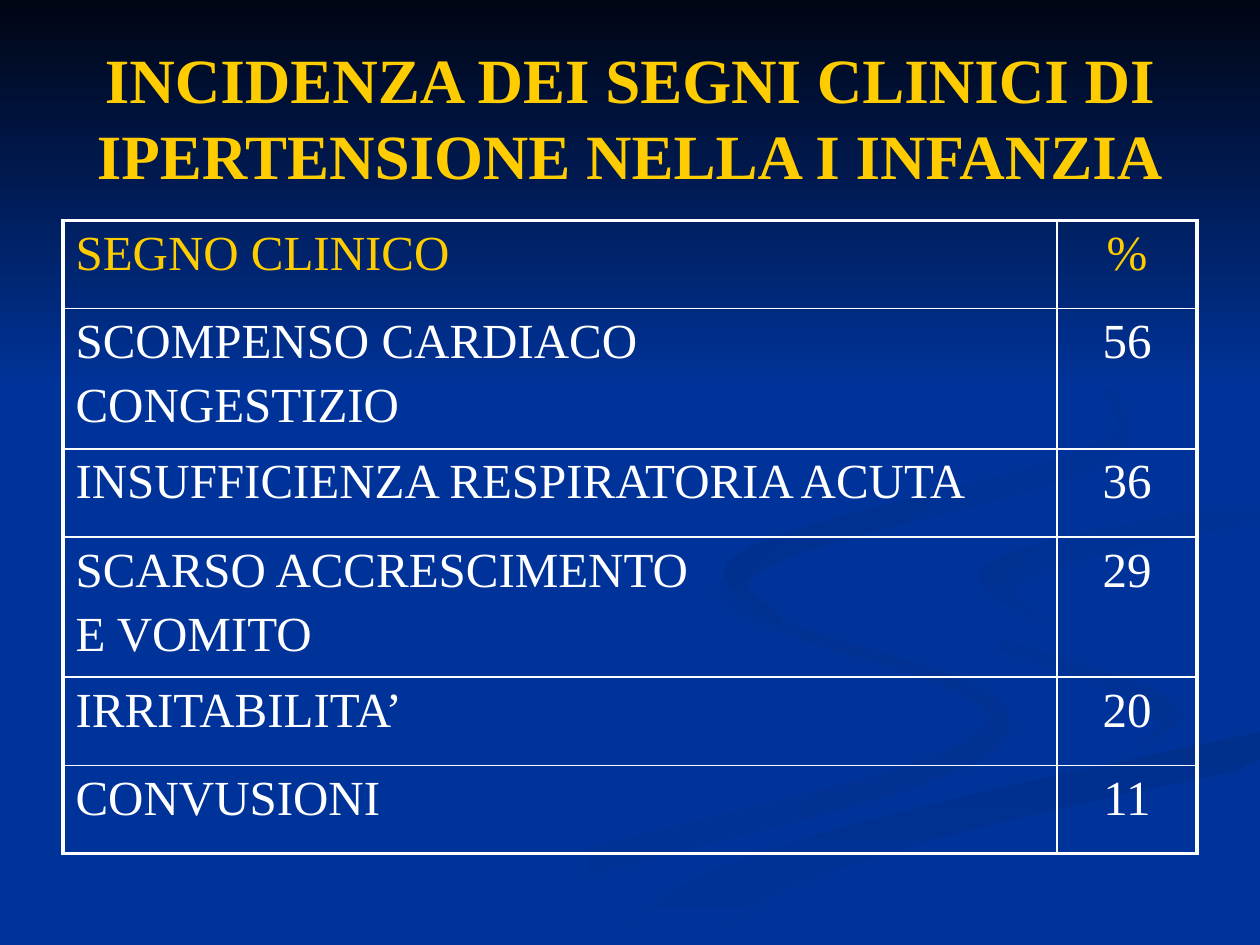
"""Build the slide on how often clinical signs of hypertension occur in infancy."""
import itertools
import math
import typing

import pptx
import pptx.dml.color
import pptx.enum.text
import pptx.oxml
import pptx.oxml.ns
import pptx.util

RGB = pptx.dml.color.RGBColor
ALIGN = pptx.enum.text.PP_ALIGN
ANCHOR = pptx.enum.text.MSO_ANCHOR
BLUE = RGB(0x00, 0x33, 0x99)
NIGHT = RGB(0x00, 0x05, 0x14)
DUSK = RGB(0x00, 0x31, 0x93)
DEEP = RGB(0x00, 0x2F, 0x8C)
SHADE = RGB(0x00, 0x30, 0x91)
GOLD = RGB(0xFF, 0xCC, 0x00)
WHITE = RGB(0xFF, 0xFF, 0xFF)

WIDTH = pptx.util.Inches(10)
HEIGHT = pptx.util.Inches(7.5)
MARGIN = 0.05
CONTENT_WIDTH = int(WIDTH * (1 - 2 * MARGIN))
SINGLE_ROW, DOUBLE_ROW = 0.7, 1.07
THIN, THICK = 1, 2.25
STEPS_PER_LEG = 16

TITLE = "INCIDENZA DEI SEGNI CLINICI DI IPERTENSIONE NELLA I INFANZIA"
SIGNS = [
    (["SEGNO CLINICO"], "%"),
    (["SCOMPENSO CARDIACO", "CONGESTIZIO"], "56"),
    (["INSUFFICIENZA RESPIRATORIA ACUTA"], "36"),
    (["SCARSO ACCRESCIMENTO", "E VOMITO"], "29"),
    (["IRRITABILITA’"], "20"),
    (["CONVUSIONI"], "11"),
]


class Turn(typing.NamedTuple):
    """A bend of a ribbon: its centre and its breadth, in inches."""
    x: float
    y: float
    breadth: float


class Ribbon(typing.NamedTuple):
    """A ribbon: its turns, its swell between them and its shading."""
    turns: list
    swell: float
    start: RGB
    end: RGB
    clockwise: int


RIBBONS = [
    Ribbon([Turn(5.76, 4.55, 0), Turn(5.73, 4.65, 0.06), Turn(7.93, 5.7, 0.14),
            Turn(3.3, 7.49, 0.61)], 0.1, BLUE, DUSK, 0),
    Ribbon([Turn(7.25, 4.6, 0), Turn(7.26, 4.7, 0.02), Turn(9.3, 5.75, 0.25),
            Turn(8.94, 6.05, 0)], 0.1, BLUE, DUSK, 45),
    Ribbon([Turn(10, 3.95, 1), Turn(7.53, 4.6, 0.56), Turn(9.71, 5.65, 0.56),
            Turn(4.9, 7.49, 0.26)], 0.15, BLUE, BLUE, 0),
    Ribbon([Turn(10.7, 5.81, 1.4), Turn(5.37, 7.49, 0.68)], 0, DEEP, BLUE, 90),
    Ribbon([Turn(10, 4.05, 1), Turn(7.93, 4.66, 0.24), Turn(8.26, 4.96, 0)],
           0.1, SHADE, BLUE, 45),
    Ribbon([Turn(8.73, 3, 0.05), Turn(8.91, 3.4, 0.05), Turn(5.85, 4.62, 0.16),
            Turn(6.2, 5, 0)], 0.2, DEEP, BLUE, 45),
]


def ribbon_outline(ribbon):
    """Return the ribbon's edges: down its left side, then up its right side."""
    left, right = [], []
    for leg, (upper, lower) in enumerate(itertools.pairwise(ribbon.turns)):
        run = lower.x - upper.x
        for step in range(STEPS_PER_LEG + 1):
            t = step / STEPS_PER_LEG
            ease = (1 - math.cos(math.pi * t)) / 2 if leg else math.sin(math.pi * t / 2)
            x = upper.x + run * ease
            y = upper.y + (lower.y - upper.y) * t
            breadth = (upper.breadth + (lower.breadth - upper.breadth) * t
                       + ribbon.swell * abs(run) * math.sin(math.pi * t))
            left.append((min(x - breadth / 2, 10), y))
            right.append((min(x + breadth / 2, 10), y))
    return left + right[::-1]


def draw_outline(slide, points, start, end, clockwise):
    """Draw a closed outline shaded from the start to the end colour."""
    first, *others = [(pptx.util.Inches(x), pptx.util.Inches(y)) for x, y in points]
    builder = slide.shapes.build_freeform(*first, scale=1)
    builder.add_line_segments(others, close=True)
    outline = builder.convert_to_shape()
    outline.shadow.inherit = False
    outline.line.fill.background()
    if start == end:
        outline.fill.solid()
        outline.fill.fore_color.rgb = start
        return
    outline.fill.gradient()
    outline.fill.gradient_angle = (360 - clockwise) % 360
    for stop, colour, position in zip(outline.fill.gradient_stops, (start, end), (0, 1)):
        stop.color.rgb = colour
        stop.position = position


def add_backdrop(slide):
    """Lay the ribbons and the night sky over a blue background."""
    slide.background.fill.solid()
    slide.background.fill.fore_color.rgb = BLUE
    for ribbon in RIBBONS:
        draw_outline(slide, ribbon_outline(ribbon), ribbon.start, ribbon.end, ribbon.clockwise)
    sky = [(0, 0), (10, 0), (10, 3.08), (0, 3.08)]
    draw_outline(slide, sky, NIGHT, BLUE, 90)


def write_lines(frame, lines, align, colour, size, bold):
    """Write one paragraph per line, spaced by a fifth of a line."""
    frame.text = "\n".join(lines)
    for order, paragraph in enumerate(frame.paragraphs):
        paragraph.alignment = align
        if order:
            paragraph._p.get_or_add_pPr().insert(0, pptx.oxml.parse_xml(
                f'<a:spcBef {pptx.oxml.ns.nsdecls("a")}><a:spcPct val="20000"/></a:spcBef>'))
        font = paragraph.runs[0].font
        style = {"name": "Times New Roman", "size": pptx.util.Pt(size), "bold": bold}
        for attribute, value in style.items():
            setattr(font, attribute, value)
        font.color.rgb = colour


def add_title(slide):
    """Place the gold heading above the table."""
    heading = slide.shapes.add_textbox(
        int(WIDTH * MARGIN), int(HEIGHT * 0.04), CONTENT_WIDTH, int(HEIGHT / 6))
    frame = heading.text_frame
    for attribute, value in {"word_wrap": True, "vertical_anchor": ANCHOR.MIDDLE}.items():
        setattr(frame, attribute, value)
    write_lines(frame, [TITLE], ALIGN.CENTER, GOLD, 36, True)


def rule_cell(cell, widths):
    """Rule the left, right, top and bottom sides of a cell in white."""
    properties = cell._tc.get_or_add_tcPr()
    for order, (side, width) in enumerate(zip("LRTB", widths)):
        properties.insert(order, pptx.oxml.parse_xml(
            f'<a:ln{side} {pptx.oxml.ns.nsdecls("a")} w="{pptx.util.Pt(width)}">'
            f'<a:solidFill><a:srgbClr val="{WHITE}"/></a:solidFill></a:ln{side}>'))


def add_sign_table(slide):
    """Lay out the clinical signs with their percentages."""
    heights = [DOUBLE_ROW if len(sign) > 1 else SINGLE_ROW for sign, _ in SIGNS]
    table = slide.shapes.add_table(
        len(SIGNS), 2, int(WIDTH * MARGIN), pptx.util.Inches(1.75),
        CONTENT_WIDTH, pptx.util.Inches(sum(heights))).table
    for attribute, value in {"first_row": False, "horz_banding": False}.items():
        setattr(table, attribute, value)
    for column, width in zip(table.columns, (7.89, 1.11)):
        column.width = pptx.util.Inches(width)
    last = len(SIGNS) - 1
    for r, (sign, percent) in enumerate(SIGNS):
        table.rows[r].height = pptx.util.Inches(heights[r])
        for c, (lines, align) in enumerate([(sign, ALIGN.LEFT), ([percent], ALIGN.CENTER)]):
            cell = table.cell(r, c)
            cell.fill.background()
            write_lines(cell.text_frame, lines, align, WHITE if r else GOLD, 28, False)
            outer = (c == 0, c == 1, r == 0, r == last)
            rule_cell(cell, [THICK if edge else THIN for edge in outer])


def main():
    """Assemble and save the slide."""
    deck = pptx.Presentation()
    for attribute, value in {"slide_width": WIDTH, "slide_height": HEIGHT}.items():
        setattr(deck, attribute, value)
    slide = deck.slides.add_slide(deck.slide_layouts[6])
    add_backdrop(slide)
    add_title(slide)
    add_sign_table(slide)
    deck.save("out.pptx")


if __name__ == "__main__":
    main()
